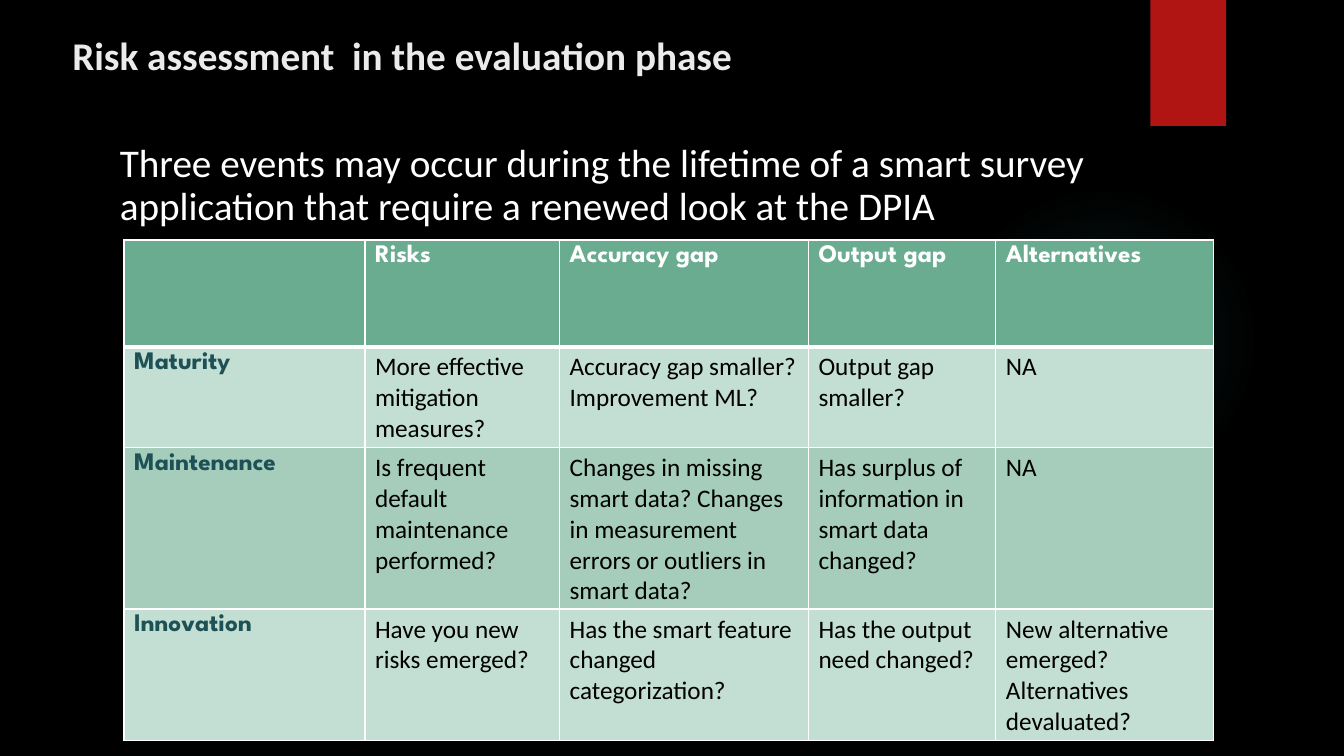
"""Build the slide on risk assessment in the evaluation phase."""
from dataclasses import dataclass

from lxml.etree import SubElement
from pptx import Presentation
from pptx.dml.color import RGBColor
from pptx.enum.shapes import MSO_AUTO_SHAPE_TYPE as ShapeKind
from pptx.enum.text import MSO_AUTO_SIZE as AutoSize
from pptx.oxml import parse_xml
from pptx.oxml.ns import nsdecls, qn
from pptx.slide import Slide
from pptx.table import _Cell as Cell
from pptx.text.text import _Paragraph as Paragraph
from pptx.util import Pt

BLACK = RGBColor(0x00, 0x00, 0x00)
WHITE = RGBColor(0xFF, 0xFF, 0xFF)
OFF_WHITE = RGBColor(0xEB, 0xEB, 0xEB)
RED = RGBColor(0xB0, 0x15, 0x13)
GLOW = RGBColor(0x50, 0xB9, 0xC1)
TEAL = RGBColor(0x1E, 0x51, 0x55)
HEADER_GREEN = RGBColor(0x6A, 0xAC, 0x90)
LIGHT_GREEN = RGBColor(0xC3, 0xDE, 0xD3)
MID_GREEN = RGBColor(0xA6, 0xCD, 0xBC)

COLUMN_WIDTHS = (172.1, 139, 177.8, 133.9, 155.5)
ROW_HEIGHTS = (76.4, 72, 115, 93.6)
GLOW_STOPS = ((0, 7), (36, 6), (69, 0))
ROWS = (
    ("", "Risks", "Accuracy gap", "Output gap", "Alternatives"),
    ("Maturity", "More effective mitigation measures?",
     "Accuracy gap smaller? Improvement ML?", "Output gap smaller?", "NA"),
    ("Maintenance", "Is frequent default maintenance performed?",
     "Changes in missing smart data? Changes in measurement errors or outliers in smart data?",
     "Has surplus of information in smart data changed?", "NA"),
    ("Innovation", "Have you new risks emerged?",
     "Has the smart feature changed categorization?",
     "Has the output need changed?",
     "New alternative emerged? Alternatives devaluated?"),
)


@dataclass(frozen=True)
class Style:
    """Look of a run of text."""
    size: float
    color: RGBColor
    font: str = "Calibri"
    bold: bool = False


@dataclass(frozen=True)
class TextBlock:
    """Text box with its place and style."""
    text: str
    left: float
    top: float
    width: float
    height: float
    style: Style
    wrap: bool = True
    spacing: float = 1.0


HEADER = Style(18, WHITE, "League Spartan", True)
ROW_LABEL = Style(18, TEAL, "League Spartan", True)
ANSWER = Style(18, BLACK)
BLOCKS = (
    TextBlock("Risk assessment  in the evaluation phase", 44.6, 18.7, 503.3, 41,
              Style(28, OFF_WHITE, bold=True), wrap=False),
    TextBlock("Three events may occur during the lifetime of a smart survey "
              "application that require a renewed look at the DPIA",
              78.5, 99.4, 828, 72, Style(28, WHITE), spacing=0.9),
)


def add_span(para: Paragraph, text: str, style: Style) -> None:
    """Add one styled run to a paragraph."""
    span = para.add_run()
    span.text = text
    span.font.size = Pt(style.size)
    span.font.name = style.font
    span.font.bold = style.bold
    span.font.color.rgb = style.color


def add_block(page: Slide, block: TextBlock) -> None:
    """Draw a text box."""
    box = page.shapes.add_textbox(Pt(block.left), Pt(block.top), Pt(block.width), Pt(block.height))
    frame = box.text_frame
    frame.word_wrap = block.wrap
    frame.auto_size = AutoSize.NONE if block.wrap else AutoSize.SHAPE_TO_FIT_TEXT
    para = frame.paragraphs[0]
    para.line_spacing = block.spacing
    add_span(para, block.text, block.style)


def add_glow(page: Slide) -> None:
    """Draw the faint round glow behind the table."""
    glow = page.shapes.add_shape(ShapeKind.OVAL, Pt(677.5), Pt(131.8), Pt(221.8), Pt(221.8))
    glow.shadow.inherit = False
    glow.line.fill.background()
    stops = "".join(
        f'<a:gs pos="{position * 1000}"><a:srgbClr val="{GLOW}">'
        f'<a:alpha val="{alpha * 1000}"/></a:srgbClr></a:gs>'
        for position, alpha in GLOW_STOPS)
    gradient = parse_xml(
        f'<a:gradFill {nsdecls("a")}><a:gsLst>{stops}</a:gsLst><a:path path="circle">'
        '<a:fillToRect l="50000" t="50000" r="50000" b="50000"/></a:path></a:gradFill>')
    glow.element.spPr.find(qn("a:prstGeom")).addnext(gradient)


def add_ribbon(page: Slide) -> None:
    """Draw the red ribbon at the top edge."""
    ribbon = page.shapes.add_shape(ShapeKind.RECTANGLE, Pt(821.8), Pt(0), Pt(54), Pt(90))
    ribbon.shadow.inherit = False
    ribbon.fill.solid()
    ribbon.fill.fore_color.rgb = RED
    ribbon.line.fill.background()


def set_borders(cell: Cell, top: float, bottom: float) -> None:
    """Give a cell white borders; the fill must be set afterwards."""
    properties = cell._tc.get_or_add_tcPr()
    for side, width in (("L", 1), ("R", 1), ("T", top), ("B", bottom)):
        line = SubElement(properties, qn(f"a:ln{side}"), w=str(Pt(width)))
        SubElement(SubElement(line, qn("a:solidFill")), qn("a:srgbClr"), val=str(WHITE))


def add_risk_table(page: Slide) -> None:
    """Draw the table of events and questions."""
    table = page.shapes.add_table(
        len(ROWS), len(COLUMN_WIDTHS), Pt(88.6), Pt(171.4),
        Pt(sum(COLUMN_WIDTHS)), Pt(sum(ROW_HEIGHTS))).table
    for column, width in zip(table.columns, COLUMN_WIDTHS):
        column.width = Pt(width)
    for row, height in zip(table.rows, ROW_HEIGHTS):
        row.height = Pt(height)
    for row_index, texts in enumerate(ROWS):
        is_header = row_index == 0
        band = HEADER_GREEN if is_header else (MID_GREEN, LIGHT_GREEN)[row_index % 2]
        for column_index, text in enumerate(texts):
            cell = table.cell(row_index, column_index)
            set_borders(cell, 3 if row_index == 1 else 1, 3 if is_header else 1)
            cell.fill.solid()
            cell.fill.fore_color.rgb = band
            style = HEADER if is_header else ANSWER if column_index else ROW_LABEL
            if text:
                add_span(cell.text_frame.paragraphs[0], text, style)


def main() -> None:
    """Build and save the deck."""
    deck = Presentation()
    deck.slide_width, deck.slide_height = Pt(960), Pt(540)
    page = deck.slides.add_slide(deck.slide_layouts[6])
    page.background.fill.solid()
    page.background.fill.fore_color.rgb = BLACK
    add_glow(page)
    add_ribbon(page)
    for block in BLOCKS:
        add_block(page, block)
    add_risk_table(page)
    deck.save("out.pptx")


if __name__ == "__main__":
    main()
